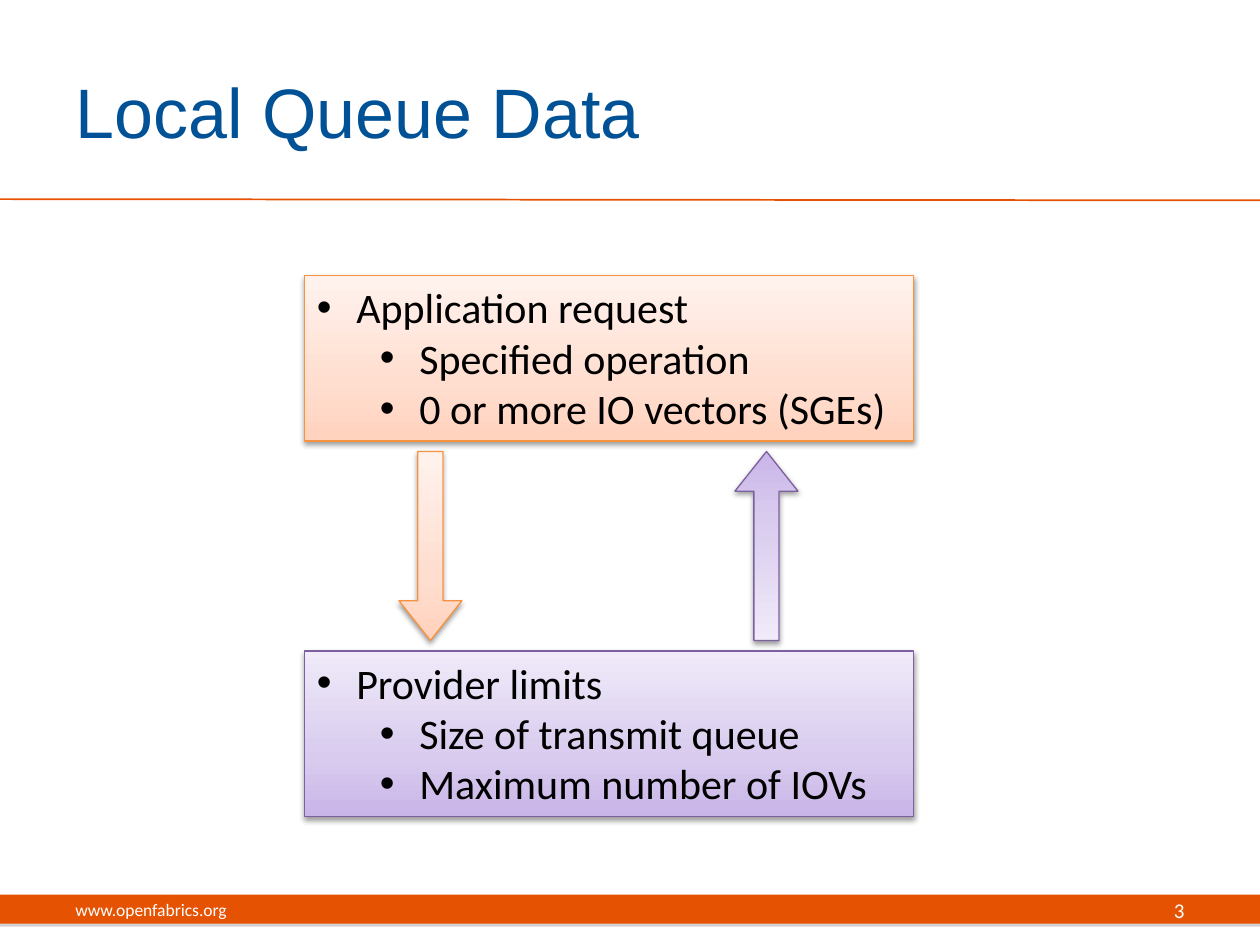
"""Build the Local Queue Data slide."""
from copy import deepcopy

from lxml import etree
from pptx import Presentation, util as u
from pptx.dml.color import RGBColor
from pptx.enum import shapes, text
from pptx.oxml import ns

COLORS = {
    "brand": "E55302", "title": "005195", "white": "FFFFFF", "black": "000000",
    "grey": "808080", "orange": "F69240", "purple": "7D60A0",
}
GRADIENTS = {
    "orange": [(0, "FFD2BD"), (0.35, "FFDED0"), (1, "FFF2ED")],
    "purple": [(0, "C9B5E8"), (0.35, "D8CBEE"), (1, "F0EAF9")],
}
KINDS = shapes.MSO_SHAPE


def rgb(name):
    """Return the named colour."""
    return RGBColor.from_string(COLORS[name])


def add_child(parent, tag, **attributes):
    """Append a DrawingML element to the parent."""
    return etree.SubElement(parent, ns.qn(f"a:{tag}"), attributes)


class SlideBuilder:
    """Hold the style and the current slide."""

    body_font = "Calibri"
    title_font = "Arial"
    body_size = 24

    def __init__(self, page):
        """Keep the slide that receives the elements."""
        self.page = page

    def style(self, para, size, color, font=None):
        """Set the font of a paragraph."""
        para.font.name = font or self.body_font
        para.font.size = u.Pt(size)
        para.font.color.rgb = rgb(color)

    def title(self, words, left, top, width, height):
        """Place and format the title placeholder."""
        box = self.page.shapes.title
        box.left, box.top, box.width, box.height = map(u.Pt, (left, top, width, height))
        frame = box.text_frame
        frame.text = words
        frame.vertical_anchor = text.MSO_ANCHOR.MIDDLE
        para = frame.paragraphs[0]
        para.alignment = text.PP_ALIGN.LEFT
        self.style(para, 40, "title", self.title_font)

    def label(self, words, left, top, width, height, size, align):
        """Add a footer text box."""
        box = self.page.shapes.add_textbox(*map(u.Pt, (left, top, width, height)))
        frame = box.text_frame
        frame.word_wrap = True
        frame.vertical_anchor = text.MSO_ANCHOR.MIDDLE
        para = frame.paragraphs[0]
        para.text = words
        para.alignment = align
        self.style(para, size, "white")

    def rule(self, left, top, right, bottom):
        """Add the line under the title."""
        line = self.page.shapes.add_connector(
            shapes.MSO_CONNECTOR.STRAIGHT, *map(u.Pt, (left, top, right, bottom)))
        line.line.color.rgb = rgb("brand")
        line.line.width = u.Pt(1)
        add_child(line._element.spPr, "effectLst")

    def shadow(self, shape, color, opacity, blur, distance):
        """Give a shape a shadow that falls downwards."""
        shape.shadow.inherit = False
        effects = shape._element.spPr.find(ns.qn("a:effectLst"))
        outer = add_child(effects, "outerShdw", blurRad=str(u.Pt(blur)),
                          dist=str(u.Pt(distance)), dir="5400000", rotWithShape="0")
        tint = add_child(outer, "srgbClr", val=COLORS[color])
        add_child(tint, "alpha", val=str(opacity * 1000))

    def bar(self, left, top, width, height):
        """Add the footer bar."""
        bar = self.page.shapes.add_shape(
            KINDS.RECTANGLE, *map(u.Pt, (left, top, width, height)))
        bar.fill.solid()
        bar.fill.fore_color.rgb = rgb("brand")
        bar.line.fill.background()
        self.shadow(bar, "grey", 35, 0, 1.8)

    def gradient_shape(self, kind, theme, left, top, width, height, angle=90):
        """Add an outlined shape with a three-stop gradient."""
        shape = self.page.shapes.add_shape(kind, *map(u.Pt, (left, top, width, height)))
        shape.fill.gradient()
        shape.fill.gradient_angle = angle
        stop_list = shape._element.spPr.find(f".//{ns.qn('a:gsLst')}")
        stop_list.append(deepcopy(stop_list[-1]))
        for stop, (position, color) in zip(shape.fill.gradient_stops, GRADIENTS[theme]):
            stop.position = position
            stop.color.rgb = RGBColor.from_string(color)
        shape.line.color.rgb = rgb(theme)
        shape.line.width = u.Pt(0.75)
        self.shadow(shape, "black", 38, 3.1, 1.6)
        return shape

    def bullet_box(self, theme, top, items):
        """Add a box with a heading bullet and nested bullets."""
        box = self.gradient_shape(KINDS.RECTANGLE, theme, 174, top, 348, 94.5)
        frame = box.text_frame
        frame.word_wrap = True
        frame.auto_size = text.MSO_AUTO_SIZE.SHAPE_TO_FIT_TEXT
        frame.vertical_anchor = text.MSO_ANCHOR.TOP
        for index, words in enumerate(items):
            para = frame.add_paragraph() if index else frame.paragraphs[0]
            para.text = words
            para.level = min(index, 1)
            para.alignment = text.PP_ALIGN.LEFT
            properties = para._p.get_or_add_pPr()
            properties.set("marL", str(u.Pt(22.5 + 36 * para.level)))
            properties.set("indent", str(-u.Pt(22.5)))
            add_child(properties, "buFont", typeface="Arial")
            add_child(properties, "buChar", char="•")
            self.style(para, self.body_size, "black")

    def arrow(self, kind, theme, left, angle):
        """Add a block arrow between the two boxes."""
        arrow = self.gradient_shape(kind, theme, left, 258, 36, 108, angle)
        arrow.adjustments[0] = 0.4
        arrow.adjustments[1] = 0.63


def main():
    """Build and save the deck."""
    deck = Presentation()
    deck.slide_width, deck.slide_height = u.Pt(720), u.Pt(540)
    slide = SlideBuilder(deck.slides.add_slide(deck.slide_layouts[5]))
    slide.bar(0, 511.2, 720, 16.6)
    slide.rule(0, 113.8, 720, 114.5)
    slide.title("Local Queue Data", 36, 18, 588, 90)
    slide.label("www.openfabrics.org", 36, 505.5, 228, 28.8, 10, text.PP_ALIGN.LEFT)
    slide.label("3", 516, 505.5, 168, 28.8, 12, text.PP_ALIGN.RIGHT)
    slide.bullet_box("orange", 157.5, [
        "Application request", "Specified operation", "0 or more IO vectors (SGEs)"])
    slide.bullet_box("purple", 372, [
        "Provider limits", "Size of transmit queue", "Maximum number of IOVs"])
    slide.arrow(KINDS.DOWN_ARROW, "orange", 228, 90)
    slide.arrow(KINDS.UP_ARROW, "purple", 420, 270)
    deck.save("out.pptx")


if __name__ == "__main__":
    main()
